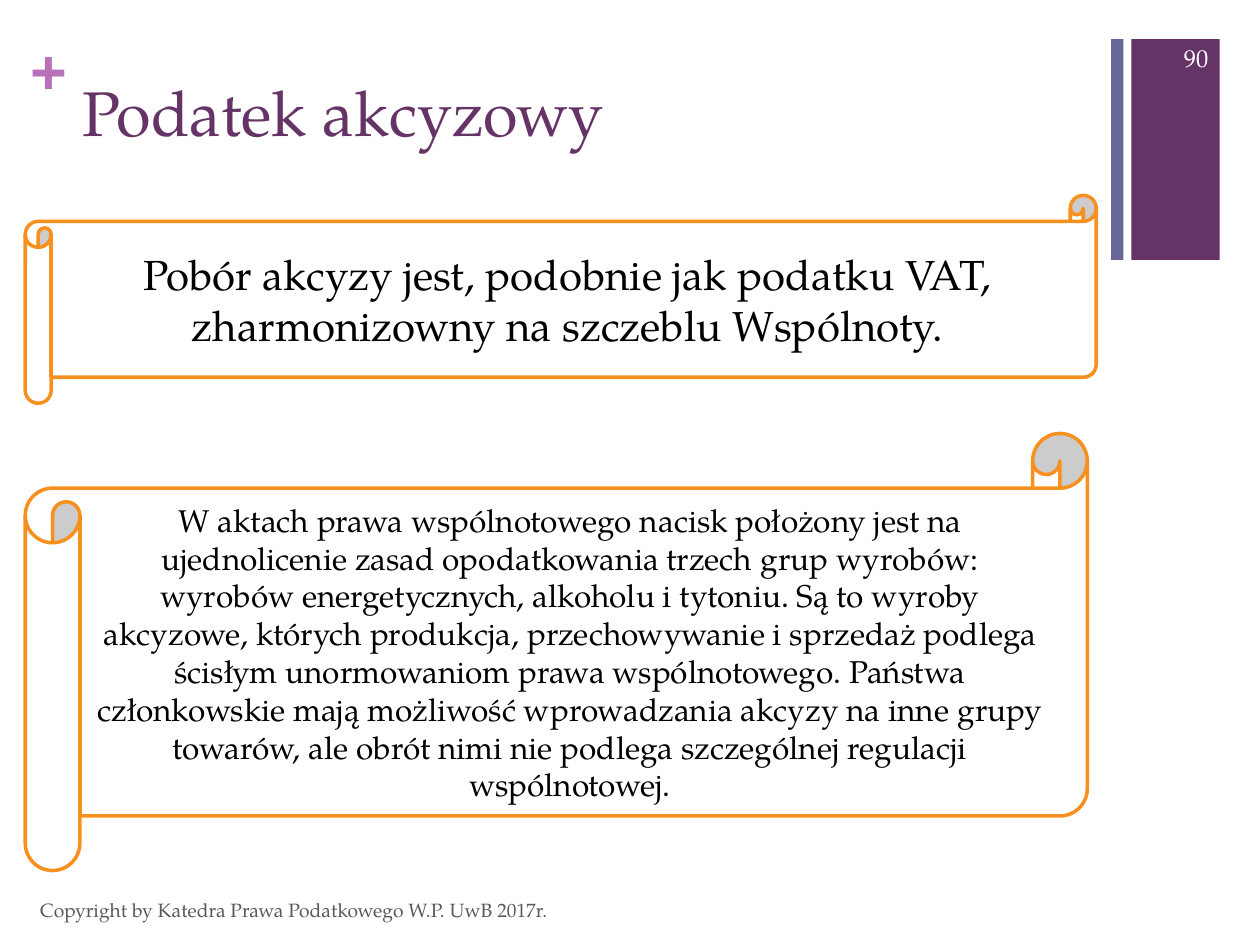
"""Build the slide on excise duty with two scroll panels."""
import pptx
import pptx.dml.color
import pptx.enum.shapes
import pptx.enum.text
import pptx.util
from pptx.util import Cm

RGBColor = pptx.dml.color.RGBColor
PLUM = RGBColor(0x66, 0x33, 0x66)
SLATE = RGBColor(0x66, 0x66, 0x99)
ORCHID = RGBColor(0xB8, 0x70, 0xB8)
ORANGE = RGBColor(0xF7, 0x90, 0x1E)
GREY = RGBColor(0x59, 0x59, 0x59)
WHITE = RGBColor(0xFF, 0xFF, 0xFF)
BLACK = RGBColor(0x00, 0x00, 0x00)
SERIF = "TeX Gyre Pagella"
ALIGN = pptx.enum.text.PP_ALIGN
ANCHOR = pptx.enum.text.MSO_ANCHOR
PRESET = pptx.enum.shapes.MSO_SHAPE


def write(holder, words, size, color, align=ALIGN.LEFT, anchor=ANCHOR.MIDDLE, font=SERIF, bold=False):
    frame = holder.text_frame
    frame.word_wrap = True
    frame.auto_size = pptx.enum.text.MSO_AUTO_SIZE.NONE
    frame.vertical_anchor = anchor
    paragraph = frame.paragraphs[0]
    paragraph.alignment = align
    run = paragraph.add_run()
    run.text = words
    run.font.name = font
    run.font.size = pptx.util.Pt(size)
    run.font.bold = bold
    run.font.color.rgb = color


def draw(preset, left, top, width, height, fill):
    shape = slide.shapes.add_shape(preset, Cm(left), Cm(top), Cm(width), Cm(height))
    shape.shadow.inherit = False
    shape.fill.solid()
    shape.fill.fore_color.rgb = fill
    shape.line.fill.background()
    return shape


deck = pptx.Presentation()
deck.slide_width, deck.slide_height = Cm(25.4), Cm(19.05)
slide = deck.slides.add_slide(deck.slide_layouts[5])
slide.background.fill.solid()
slide.background.fill.fore_color.rgb = WHITE

for left, width, color in [(22.81, 1.78, PLUM), (22.4, 0.25, SLATE)]:
    draw(PRESET.RECTANGLE, left, 0.79, width, 4.45, color)

plus = slide.shapes.add_textbox(Cm(0.61), Cm(0.64), Cm(0.74), Cm(1.55))
plus.text_frame.margin_left = plus.text_frame.margin_right = 0
plus.text_frame.margin_top = plus.text_frame.margin_bottom = 0
write(plus, "+", 36, ORCHID, anchor=ANCHOR.TOP, font="Arial", bold=True)

title = slide.shapes.title
title.left, title.top, title.width, title.height = Cm(1.4), Cm(1.35), Cm(20.98), Cm(3.1)
write(title, "Podatek akcyzowy", 36, PLUM, anchor=ANCHOR.TOP)

copyright_line = slide.shapes.add_textbox(Cm(0.56), Cm(17.83), Cm(17.02), Cm(1.02))
write(copyright_line, "Copyright by Katedra Prawa Podatkowego W.P. UwB 2017r.", 11, GREY)

page_number = slide.shapes.add_textbox(Cm(23.06), Cm(0.66), Cm(1.55), Cm(1.02))
write(page_number, "90", 14, WHITE, align=ALIGN.RIGHT)

scrolls = [
    (3.94, 21.59, 4.19, 24,
     "Pobór akcyzy jest, podobnie jak podatku VAT, zharmonizowny na szczeblu Wspólnoty."),
    (8.74, 21.41, 8.81, 18,
     "W aktach prawa wspólnotowego nacisk położony jest na ujednolicenie zasad "
     "opodatkowania trzech grup wyrobów: wyrobów energetycznych, alkoholu i tytoniu. "
     "Są to wyroby akcyzowe, których produkcja, przechowywanie i sprzedaż podlega "
     "ścisłym unormowaniom prawa wspólnotowego. Państwa członkowskie mają możliwość "
     "wprowadzania akcyzy na inne grupy towarów, ale obrót nimi nie podlega "
     "szczególnej regulacji wspólnotowej."),
]
for top, width, height, size, words in scrolls:
    scroll = draw(PRESET.HORIZONTAL_SCROLL, 0.51, top, width, height, WHITE)
    scroll.line.color.rgb = ORANGE
    scroll.line.width = pptx.util.Pt(2)
    write(scroll, words, size, BLACK, align=ALIGN.CENTER)

deck.save("out.pptx")
